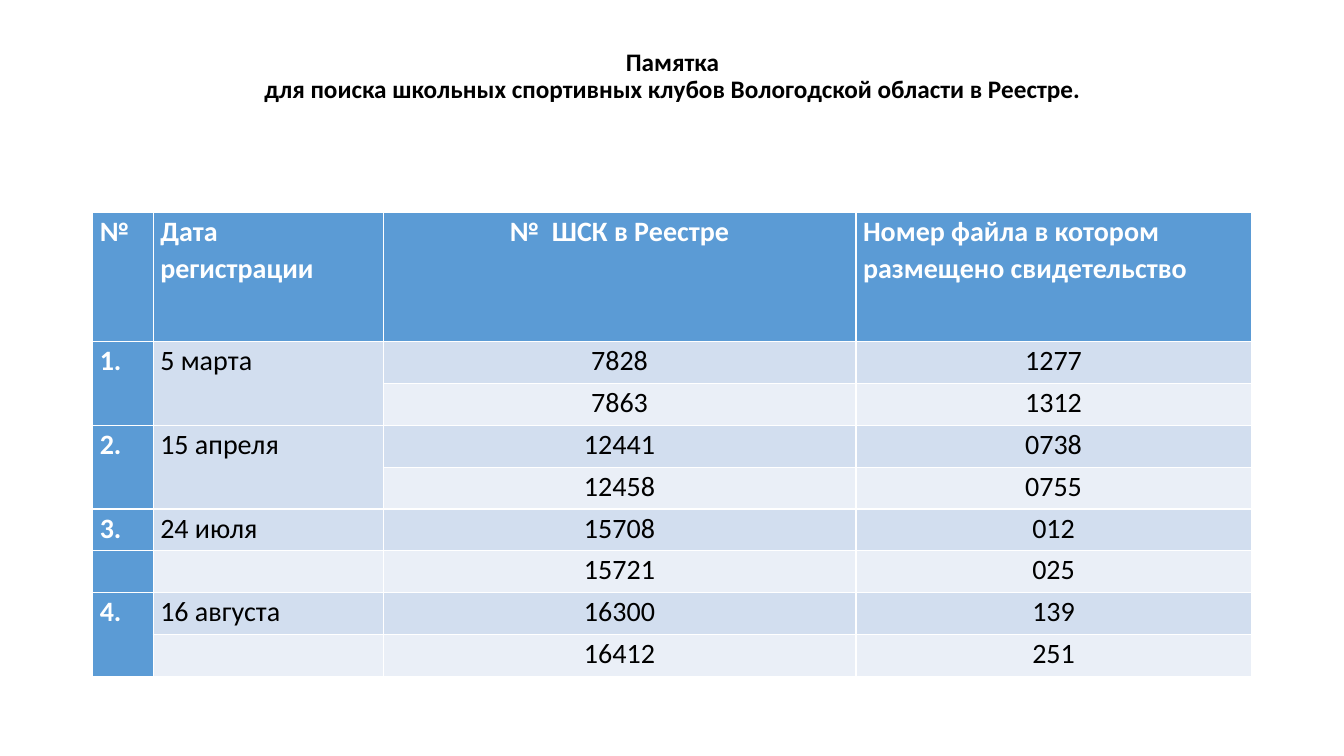
from pptx import Presentation
from pptx import util as u
from pptx.dml.color import RGBColor
from pptx.enum import text

COLORS = {"head": "5B9BD5", "odd": "D2DEEF", "even": "EAEFF7",
          "white": "FFFFFF", "black": "000000"}
LEFT, WIDTH = 0.92, 11.5
TABLE_TOP, TABLE_HEIGHT, HEAD_HEIGHT = 2.11, 4.6, 1.28
COL_WIDTHS = [0.6, 2.28, 4.69, 3.92]
CENTER, START = text.PP_ALIGN.CENTER, text.PP_ALIGN.LEFT

TITLE = ["Памятка",
         "для поиска школьных спортивных клубов Вологодской области в Реестре."]
ROWS = [
    ["№", "Дата  регистрации", "№  ШСК в Реестре",
     "Номер файла в котором размещено свидетельство"],
    ["1.", "5 марта", "7828", "1277"],
    ["", "", "7863", "1312"],
    ["2.", "15 апреля", "12441", "0738"],
    ["", "", "12458", "0755"],
    ["3.", "24 июля", "15708", "012"],
    ["", "", "15721", "025"],
    ["4.", "16 августа", "16300", "139"],
    ["", "", "16412", "251"],
]
MERGED_PAIRS = [(1, 0), (1, 1), (3, 0), (3, 1), (7, 0)]  # (upper row, column)


def write(p, words, size=20, color="black", bold=False, align=START, spacing=1.07):
    p.alignment, p.line_spacing = align, spacing
    r = p.add_run()
    r.text = words
    r.font.name, r.font.size, r.font.bold = "Calibri", u.Pt(size), bold
    r.font.color.rgb = RGBColor.from_string(COLORS[color])


prs = Presentation()
prs.slide_width, prs.slide_height = u.Inches(13.33), u.Inches(7.5)
s = prs.slides.add_slide(prs.slide_layouts[5])

title = s.shapes.title
title.left, title.top = u.Inches(LEFT), u.Inches(0.4)
title.width, title.height = u.Inches(WIDTH), u.Inches(1.45)
tf = title.text_frame
tf.word_wrap = True
tf.auto_size = text.MSO_AUTO_SIZE.NONE
tf.vertical_anchor = text.MSO_ANCHOR.TOP
tf.margin_top = u.Inches(0.09)
for i, line in enumerate(TITLE):
    p = tf.add_paragraph() if i else tf.paragraphs[0]
    p.space_before = u.Pt(0)
    write(p, line, size=18, bold=True, align=CENTER, spacing=0.9)

table = s.shapes.add_table(len(ROWS), len(COL_WIDTHS), u.Inches(LEFT), u.Inches(TABLE_TOP),
                           u.Inches(WIDTH), u.Inches(TABLE_HEIGHT)).table
table.first_col = True
for column, width in zip(table.columns, COL_WIDTHS):
    column.width = u.Inches(width)
body_height = (TABLE_HEIGHT - HEAD_HEIGHT) / (len(ROWS) - 1)

for r, row in enumerate(ROWS):
    table.rows[r].height = u.Inches(body_height if r else HEAD_HEIGHT)
    for c, words in enumerate(row):
        cell = table.cell(r, c)
        is_head = r == 0 or c == 0
        fill = "head" if is_head else "odd" if r % 2 else "even"
        cell.fill.solid()
        cell.fill.fore_color.rgb = RGBColor.from_string(COLORS[fill])
        cell.margin_left = cell.margin_right = u.Inches(0.07)
        cell.margin_top = cell.margin_bottom = 0
        if words:
            centered = c == 2 or (c == 3 and r > 0)
            write(cell.text_frame.paragraphs[0], words, bold=is_head,
                  color="white" if is_head else "black",
                  align=CENTER if centered else START)

for r, c in MERGED_PAIRS:
    table.cell(r, c).merge(table.cell(r + 1, c))

prs.save("out.pptx")
